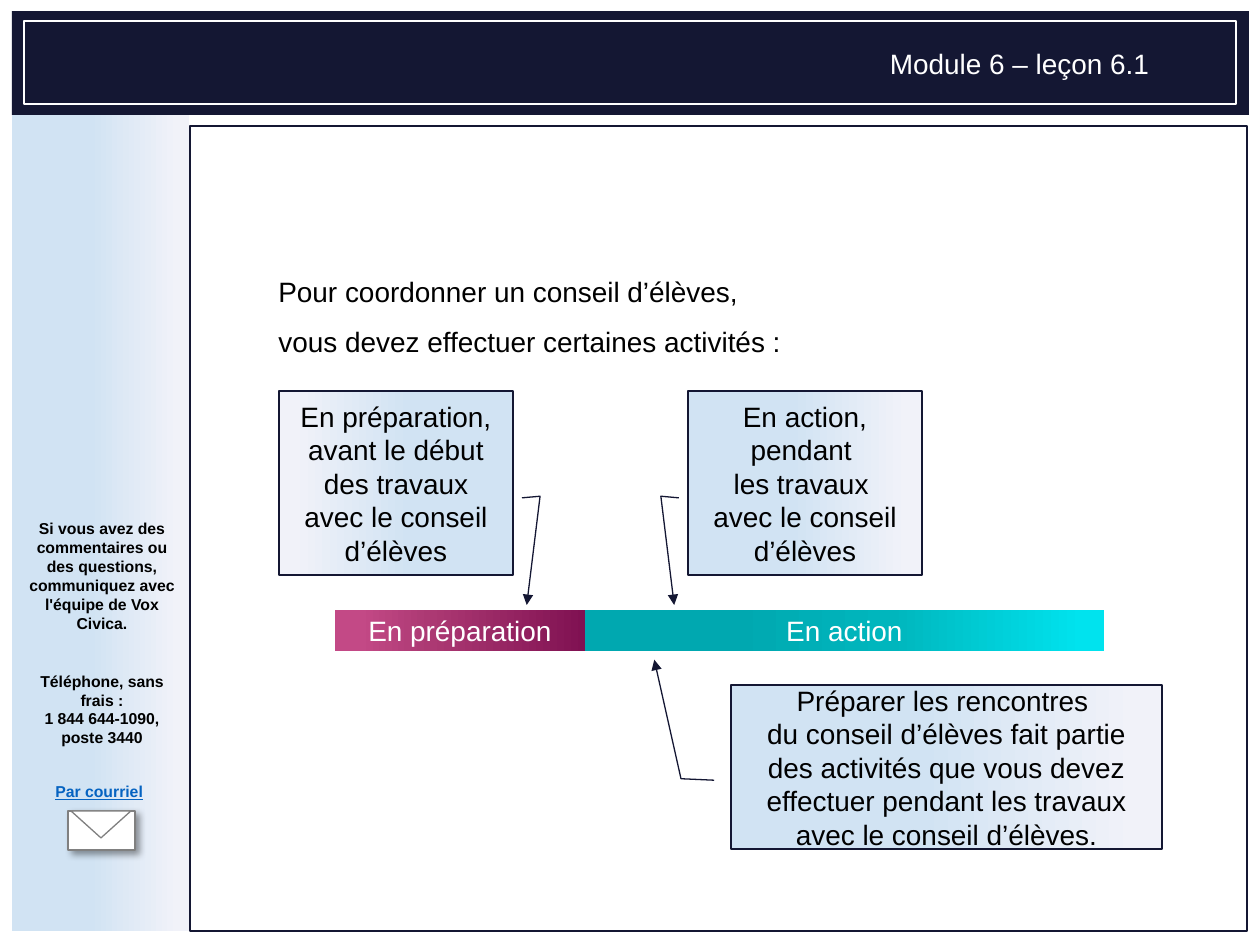
"""Build the lesson 6.1 slide on coordinating a student council."""
from dataclasses import dataclass, field
from typing import Any, Optional, Union

from lxml import etree
from pptx import Presentation, util as u
from pptx.dml.color import RGBColor
from pptx.enum import shapes as kinds, text as txt
from pptx.oxml.ns import qn

Stops = tuple[tuple[int, str], ...]
KIND = kinds.MSO_SHAPE
CENTER, LEFT = txt.PP_ALIGN.CENTER, txt.PP_ALIGN.LEFT
MIDDLE, TOP = txt.MSO_ANCHOR.MIDDLE, txt.MSO_ANCHOR.TOP


@dataclass(frozen=True)
class Theme:
    font: str = "Arial"
    body: int = 16
    small: int = 9
    navy: str = "141733"
    black: str = "000000"
    white: str = "FFFFFF"
    grey: str = "808080"
    link: str = "0563C1"
    sky: Stops = ((6, "F1F2F9"), (56, "D1E3F3"), (99, "CEE1F2"))
    plum: Stops = ((0, "801152"), (62, "AC3973"), (90, "C34986"))
    teal: Stops = ((4, "00E3EE"), (41, "00B6BD"), (72, "00A8B0"))


THEME = Theme()


@dataclass(frozen=True)
class Area:
    left: int
    top: int
    width: int
    height: int


@dataclass(frozen=True)
class Part:
    area: Area
    fill: Union[str, Stops, None] = None
    line: Optional[str] = None
    weight: float = 0.75
    kind: Any = KIND.RECTANGLE
    text: str = ""
    color: str = THEME.black
    flip: str = ""
    leader: tuple[float, ...] = ()
    shadow: bool = False


@dataclass(frozen=True)
class Label:
    area: Area
    paragraphs: tuple[str, ...]
    color: str = THEME.black
    font: dict = field(default_factory=dict)
    layout: dict = field(default_factory=dict)
    frame: dict = field(default_factory=dict)
    gap: int = 0


def px(count: int) -> u.Emu:
    return u.Emu(round(count * u.Inches(1) / 126))


def bounds(area: Area) -> tuple[u.Emu, ...]:
    return tuple(map(px, (area.left, area.top, area.width, area.height)))


def apply(target: Any, values: dict) -> None:
    for name, value in values.items():
        setattr(target, name, value)


def write(frame: Any, paragraphs: tuple[str, ...], color: str, font: dict,
          layout: dict, gap: int = 0) -> None:
    for index, wording in enumerate(paragraphs):
        paragraph = frame.add_paragraph() if index else frame.paragraphs[0]
        paragraph.text = wording
        apply(paragraph, {"alignment": CENTER, **layout})
        if index:
            paragraph.space_before = u.Pt(gap)
        for run in paragraph.runs:
            apply(run.font, {"name": THEME.font, "size": u.Pt(THEME.body), **font})
            run.font.color.rgb = RGBColor.from_string(color)


def paint(fill: Any, value: Union[str, Stops, None], properties: Any) -> None:
    if value is None:
        fill.background()
    elif isinstance(value, str):
        fill.solid()
        fill.fore_color.rgb = RGBColor.from_string(value)
    else:
        fill.gradient()
        fill.gradient_angle = 180
        stops = properties.find(f".//{qn('a:gsLst')}")
        stops.clear()
        for percent, color in value:
            stop = etree.SubElement(stops, qn("a:gs"), pos=str(percent * 1000))
            etree.SubElement(stop, qn("a:srgbClr"), val=color)


def cast_shadow(properties: Any) -> None:
    shadow = etree.SubElement(
        properties.find(qn("a:effectLst")), qn("a:outerShdw"),
        blurRad=str(u.Pt(4)), dist=str(u.Pt(3)), dir=str(45 * 60000),
        algn="tl", rotWithShape="0")
    color = etree.SubElement(shadow, qn("a:srgbClr"), val=THEME.black)
    etree.SubElement(color, qn("a:alpha"), val="40000")


def draw_part(canvas: Any, part: Part) -> None:
    shape = canvas.add_shape(part.kind, *bounds(part.area))
    properties = shape._element.spPr
    shape.shadow.inherit = False
    paint(shape.fill, part.fill, properties)
    paint(shape.line.fill, part.line, properties)
    if part.line:
        shape.line.width = u.Pt(part.weight)
    for index, value in enumerate(part.leader):
        shape.adjustments[index] = value
    if part.leader:
        etree.SubElement(shape.line._get_or_add_ln(), qn("a:tailEnd"), type="triangle")
    if part.flip:
        properties.get_or_add_xfrm().set(part.flip, "1")
    if part.shadow:
        cast_shadow(properties)
    if part.text:
        apply(shape.text_frame, {"word_wrap": True, "vertical_anchor": MIDDLE})
        write(shape.text_frame, (part.text,), part.color, {}, {})


def draw_label(canvas: Any, label: Label) -> None:
    frame = canvas.add_textbox(*bounds(label.area)).text_frame
    apply(frame, {"word_wrap": True, "vertical_anchor": TOP, **label.frame})
    write(frame, label.paragraphs, label.color, label.font, label.layout, label.gap)


def callout(area: Area, wording: str, tip: tuple[float, float], flip: str = "") -> Part:
    return Part(area, THEME.sky, THEME.navy, kind=KIND.LINE_CALLOUT_2, text=wording,
                flip=flip, leader=(0.581, -0.039, 0.572, -0.116, *tip))


SMALL = {"size": u.Pt(THEME.small), "bold": True}
DOWN, UP = (1.163, -0.059), (-0.154, -0.178)

BACKDROP = (
    Part(Area(12, 111, 177, 820), THEME.sky),
    Part(Area(190, 126, 1057, 805), line=THEME.navy, weight=1.5),
    Part(Area(12, 11, 1237, 104), THEME.navy),
    Part(Area(24, 21, 1212, 83), line=THEME.white, weight=1.5),
)
ENVELOPE = (
    Part(Area(68, 811, 67, 39), THEME.white, THEME.grey, shadow=True),
    Part(Area(71, 811, 60, 27), THEME.white, THEME.grey,
         kind=KIND.ISOSCELES_TRIANGLE, flip="flipV"),
)
LABELS = (
    Label(Area(14, 513, 176, 242), (
        "Si vous avez des commentaires ou des questions, "
        "communiquez avec l'équipe de Vox Civica.",
        "Téléphone, sans frais :\v1 844 644-1090, poste 3440",
    ), font=SMALL, gap=22),
    Label(Area(867, 40, 305, 47), ("Module 6 – leçon 6.1",), THEME.white),
    Label(Area(43, 776, 113, 31), ("Par courriel",), THEME.link,
          {**SMALL, "underline": True}, {"alignment": LEFT}, {"word_wrap": False}),
    Label(Area(266, 252, 906, 112), (
        "Pour coordonner un conseil d’élèves, \v"
        "vous devez effectuer certaines activités :",
    ), layout={"alignment": LEFT, "line_spacing": 1.5, "space_after": u.Pt(36)},
        frame={"vertical_anchor": MIDDLE}),
)
TIMELINE = (
    Part(Area(335, 610, 250, 41), THEME.plum, text="En préparation", color=THEME.white),
    Part(Area(585, 610, 519, 41), THEME.teal, text="En action", color=THEME.white),
)
CALLOUTS = (
    callout(Area(731, 685, 431, 164),
            "Préparer les rencontres \vdu conseil d’élèves fait partie des activités "
            "que vous devez effectuer pendant les travaux avec le conseil d’élèves.", UP),
    callout(Area(279, 391, 234, 184),
            "En préparation, avant le début des travaux avec le conseil d’élèves",
            DOWN, "flipH"),
    callout(Area(688, 391, 234, 184),
            "En action, pendant \vles travaux \vavec le conseil d’élèves", DOWN),
)


def main() -> None:
    deck = Presentation()
    apply(deck, {"slide_width": px(1260), "slide_height": px(945)})
    canvas = deck.slides.add_slide(deck.slide_layouts[6]).shapes
    for part in BACKDROP:
        draw_part(canvas, part)
    for label in LABELS:
        draw_label(canvas, label)
    for members in (ENVELOPE, TIMELINE):
        group = canvas.add_group_shape().shapes
        for part in members:
            draw_part(group, part)
    for part in CALLOUTS:
        draw_part(canvas, part)
    deck.save("out.pptx")


if __name__ == "__main__":
    main()
